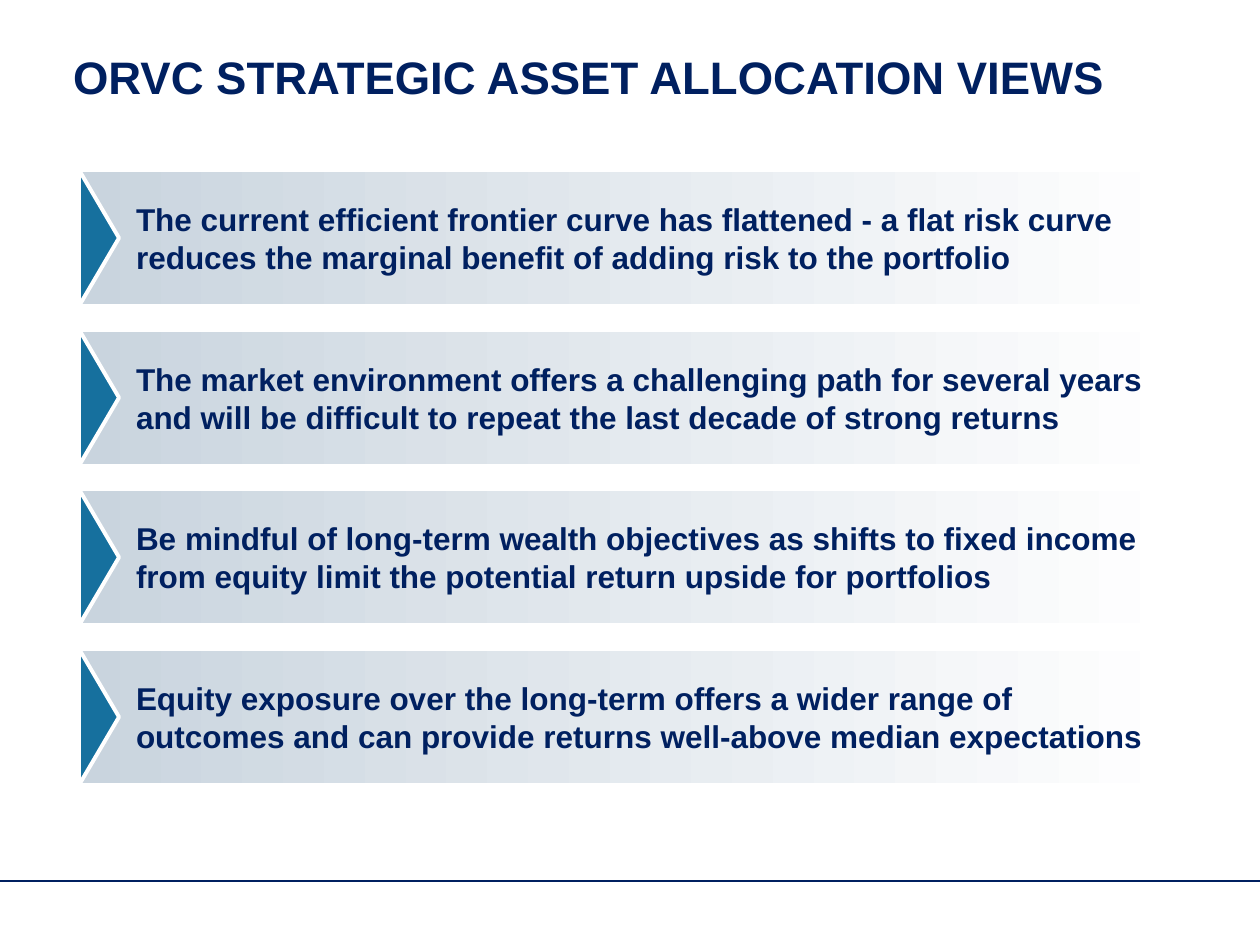
"""Build a slide of four strategic asset allocation views in arrow-marked bands."""
from lxml.etree import SubElement
from pptx import Presentation
from pptx.dml.color import RGBColor
from pptx.enum.shapes import MSO_CONNECTOR as Connector, MSO_SHAPE as Shape
from pptx.enum.text import MSO_ANCHOR as Anchor, PP_ALIGN as Align
from pptx.oxml.ns import qn
from pptx.util import Pt

TITLE = "ORVC STRATEGIC ASSET ALLOCATION VIEWS"
VIEWS = [
    "The current efficient frontier curve has flattened - a flat risk curve "
    "reduces the marginal benefit of adding risk to the portfolio",
    "The market environment offers a challenging path for several years "
    "and will be difficult to repeat the last decade of strong returns",
    "Be mindful of long-term wealth objectives as shifts to fixed income "
    "from equity limit the potential return upside for portfolios",
    "Equity exposure over the long-term offers a wider range of "
    "outcomes and can provide returns well-above median expectations",
]
NAVY, BLUE, MIST, WHITE = "002060", "16709E", "C9D4DE", "FFFFFF"
PAGE_WIDTH, PAGE_HEIGHT = 1260, 945
BAND_LEFT, BAND_WIDTH, BAND_HEIGHT = 79, 1102, 136
FIRST_TOP, LAST_TOP = 170, 649
ARROW_DEPTH = 40
RULE_TOP = 881


def px(length):
    return round(length * 914400 / 126)


def color(code):
    return RGBColor.from_string(code)


def write(box, text, size, anchor, insets, spacing=None):
    frame = box.text_frame
    frame.word_wrap = True
    frame.vertical_anchor = anchor
    frame.margin_left, frame.margin_top, frame.margin_right, frame.margin_bottom = map(px, insets)
    para = frame.paragraphs[0]
    para.alignment = Align.LEFT
    if spacing:
        para.line_spacing = Pt(spacing)
    span = para.add_run()
    span.text = text
    span.font.name = "Arial"
    span.font.size = Pt(size)
    span.font.bold = True
    span.font.color.rgb = color(NAVY)


def add_outlined(page, kind, left, top, width, height):
    shape = page.shapes.add_shape(kind, px(left), px(top), px(width), px(height))
    shape.shadow.inherit = False
    shape.line.color.rgb = color(WHITE)
    shape.line.width = Pt(2.25)
    return shape


def add_band(page, top, text):
    band = add_outlined(page, Shape.RECTANGLE, BAND_LEFT, top, BAND_WIDTH, BAND_HEIGHT)
    band.fill.gradient()
    band.fill.gradient_angle = 180
    for stop, code in zip(band.fill.gradient_stops, (WHITE, MIST)):
        stop.color.rgb = color(code)
    write(band, text, size=18, anchor=Anchor.MIDDLE, insets=(57, 6, 13, 6))


def add_arrow(page, top):
    inset = (BAND_HEIGHT - ARROW_DEPTH) / 2
    arrow = add_outlined(page, Shape.ISOSCELES_TRIANGLE, BAND_LEFT - inset, top + inset,
                         BAND_HEIGHT, ARROW_DEPTH)
    arrow.rotation = 90
    arrow.fill.solid()
    arrow.fill.fore_color.rgb = color(BLUE)


def add_rule(page):
    rule = page.shapes.add_connector(Connector.STRAIGHT, 0, px(RULE_TOP), px(PAGE_WIDTH), px(RULE_TOP))
    rule.line.color.rgb = color(NAVY)
    rule.line.width = Pt(1.5)
    SubElement(rule._element.spPr, qn("a:effectLst"))


def main():
    deck = Presentation()
    deck.slide_width, deck.slide_height = px(PAGE_WIDTH), px(PAGE_HEIGHT)
    page = deck.slides.add_slide(deck.slide_layouts[6])
    add_rule(page)
    title = page.shapes.add_textbox(px(73), px(1), px(1113), px(103))
    write(title, TITLE, size=26, anchor=Anchor.BOTTOM, insets=(0, 6, 0, 0), spacing=27)
    pitch = (LAST_TOP - FIRST_TOP) / (len(VIEWS) - 1)
    tops = [FIRST_TOP + row * pitch for row in range(len(VIEWS))]
    for top, text in zip(tops, VIEWS):
        add_band(page, top, text)
    for top in tops:
        add_arrow(page, top)
    deck.save("out.pptx")


if __name__ == "__main__":
    main()
